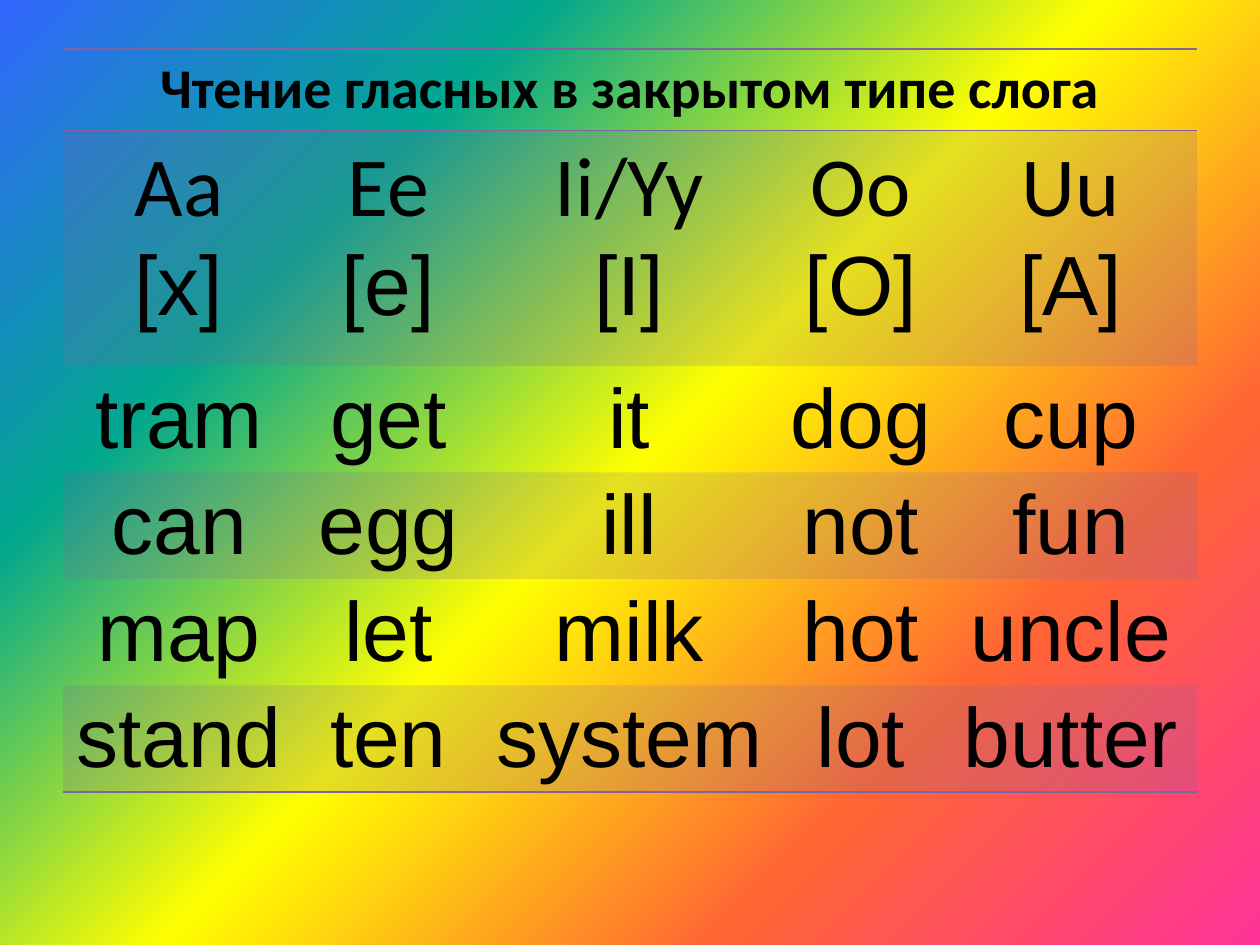
from lxml.etree import SubElement
from pptx import Presentation
from pptx.dml.color import RGBColor
from pptx.enum.text import PP_ALIGN
from pptx.oxml import parse_xml
from pptx.oxml.ns import nsdecls, qn
from pptx.util import Inches, Pt

BLACK = RGBColor(0x00, 0x00, 0x00)
PURPLE = RGBColor(0x80, 0x64, 0xA2)
RAINBOW = [
    RGBColor(0xFF, 0x33, 0x99),
    RGBColor(0xFF, 0x66, 0x33),
    RGBColor(0xFF, 0xFF, 0x00),
    RGBColor(0x01, 0xA7, 0x8F),
    RGBColor(0x33, 0x66, 0xFF),
]
PLAIN_TABLE_STYLE = "{2D5ABB26-0587-4C30-8999-92F81FD0307C}"

HEADING = "Чтение гласных в закрытом типе слога"
VOWELS = [("Aa", "[x]"), ("Ee", "[e]"), ("Ii/Yy", "[I]"), ("Oo", "[O]"), ("Uu", "[A]")]
WORDS = [
    ["tram", "get", "it", "dog", "cup"],
    ["can", "egg", "ill", "not", "fun"],
    ["map", "let", "milk", "hot", "uncle"],
    ["stand", "ten", "system", "lot", "butter"],
]
COLUMN_WIDTHS = [1.84, 1.48, 2.34, 1.33, 2]
ROW_HEIGHTS = [0.41, 1.87] + [0.41] * len(WORDS)


def paint_background(slide, colors):
    """Fill the slide with evenly spaced colours spreading from the lower right corner."""
    step = 100000 // (len(colors) - 1)
    stops = "".join(
        f'<a:gs pos="{i * step}"><a:srgbClr val="{color}"/></a:gs>'
        for i, color in enumerate(colors)
    )
    slide.element.cSld.insert(0, parse_xml(
        f'<p:bg {nsdecls("p", "a")}><p:bgPr><a:gradFill rotWithShape="1">'
        f'<a:gsLst>{stops}</a:gsLst><a:path path="circle">'
        '<a:fillToRect l="100000" t="100000"/></a:path></a:gradFill>'
        '<a:effectLst/></p:bgPr></p:bg>'
    ))


def write(paragraph, text, font="Arial", size=48, bold=False, color=BLACK):
    """Write centred text in a paragraph."""
    paragraph.alignment = PP_ALIGN.CENTER
    run = paragraph.add_run()
    run.text = text
    run.font.name = font
    run.font.size = Pt(size)
    run.font.bold = bold
    run.font.color.rgb = color


def rule(cell, *edges):
    """Draw purple lines on the given edges of a cell, before its fill."""
    properties = cell._tc.get_or_add_tcPr()
    for position, edge in enumerate(edges):
        line = parse_xml(
            f'<a:{edge} {nsdecls("a")} w="{Pt(1)}"><a:solidFill>'
            f'<a:srgbClr val="{PURPLE}"/></a:solidFill></a:{edge}>'
        )
        properties.insert(position, line)


def tint(cell):
    """Give a cell a purple fill of 20 percent opacity."""
    cell.fill.solid()
    cell.fill.fore_color.rgb = PURPLE
    color = cell._tc.tcPr.find(qn("a:solidFill")).find(qn("a:srgbClr"))
    SubElement(color, qn("a:alpha")).set("val", "20000")


def add_reading_table(slide, left, top, width, height):
    """Place the table of vowels and sample words in the given box."""
    frame = slide.shapes.add_table(
        len(ROW_HEIGHTS), len(COLUMN_WIDTHS), left, top, width, height
    )
    table = frame.table
    table.first_row = table.horz_banding = False
    table._tbl.tblPr.find(qn("a:tableStyleId")).text = PLAIN_TABLE_STYLE
    for column, share in zip(table.columns, COLUMN_WIDTHS):
        column.width = int(width * share / sum(COLUMN_WIDTHS))
    for row, row_height in zip(table.rows, ROW_HEIGHTS):
        row.height = Inches(row_height)
    frame.height = height

    heading = table.cell(0, 0)
    heading.merge(table.cell(0, len(COLUMN_WIDTHS) - 1))
    write(heading.text_frame.paragraphs[0], HEADING, font="Calibri", size=32, bold=True)
    for cell in table.rows[0].cells:
        cell.fill.background()
        rule(cell, "lnT", "lnB")

    for column, (letter, sound) in enumerate(VOWELS):
        text_frame = table.cell(1, column).text_frame
        write(text_frame.paragraphs[0], letter, font="Calibri")
        write(text_frame.add_paragraph(), sound)

    for row, words in enumerate(WORDS, start=2):
        for column, word in enumerate(words):
            write(table.cell(row, column).text_frame.paragraphs[0], word)

    last = len(ROW_HEIGHTS) - 1
    for row in range(1, last + 1):
        for cell in table.rows[row].cells:
            if row % 2:
                tint(cell)
            else:
                cell.fill.background()
            if row == last:
                rule(cell, "lnB")


def main():
    """Build the slide and save it."""
    presentation = Presentation()
    presentation.slide_width = Inches(10)
    presentation.slide_height = Inches(7.5)
    slide = presentation.slides.add_slide(presentation.slide_layouts[6])
    paint_background(slide, RAINBOW)
    add_reading_table(slide, Inches(0.5), Inches(0.39), Inches(9), Inches(6.1))
    presentation.save("out.pptx")


if __name__ == "__main__":
    main()
